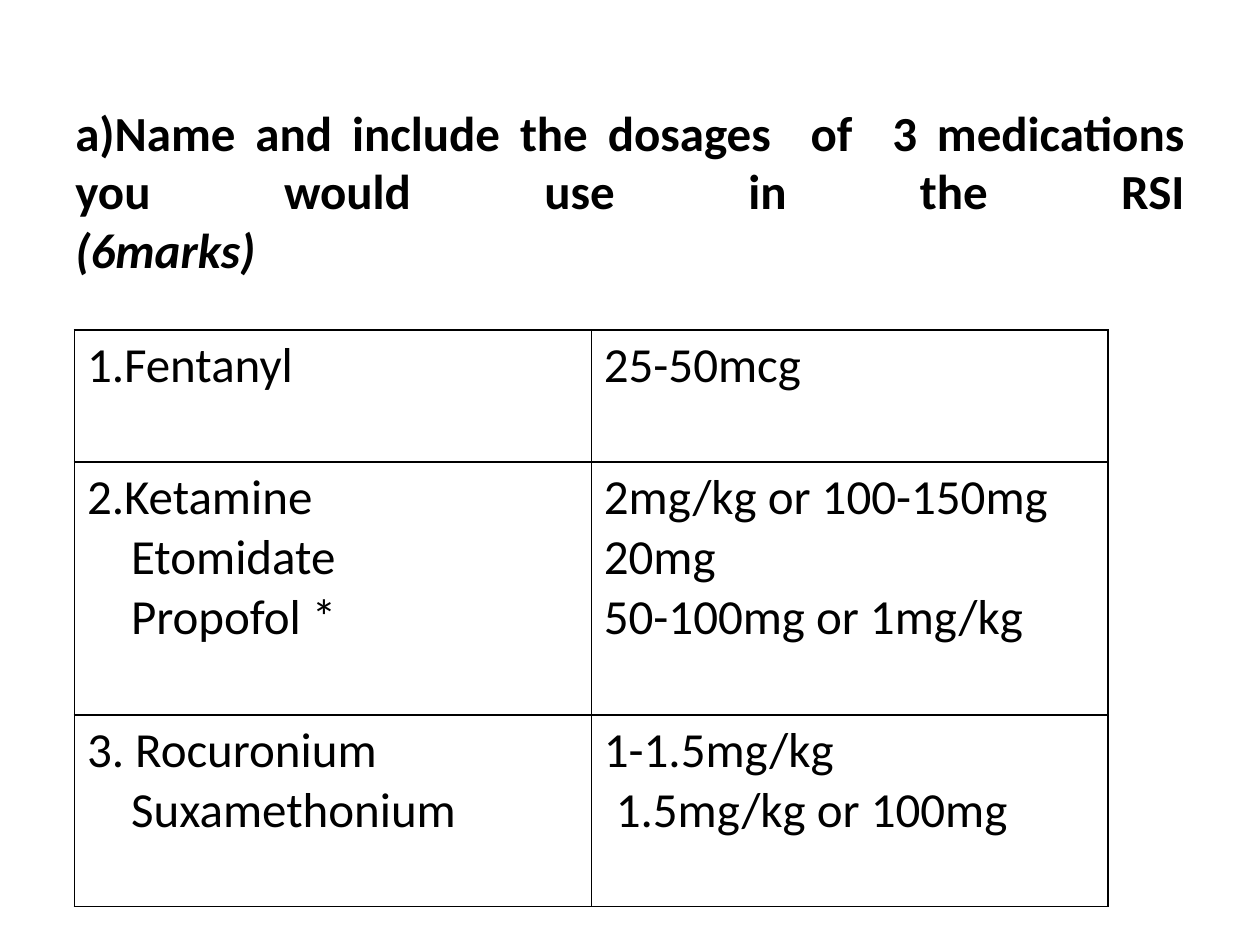
import pptx
import pptx.dml.color
import pptx.enum.text
import pptx.oxml
import pptx.oxml.ns
import pptx.util
from pptx.util import Cm

BLACK = "000000"


def style_font(font, color):
    font.name = "Calibri"
    font.size = pptx.util.Pt(28)
    font.color.rgb = pptx.dml.color.RGBColor.from_string(color)


def outline_cell(cell, color):
    """Draw a 1 pt line on all four sides of a table cell."""
    properties = cell._tc.get_or_add_tcPr()
    for position, side in enumerate(("lnL", "lnR", "lnT", "lnB")):
        border = pptx.oxml.parse_xml(
            f'<a:{side} {pptx.oxml.ns.nsdecls("a")} w="12700"><a:solidFill>'
            f'<a:srgbClr val="{color}"/></a:solidFill></a:{side}>'
        )
        properties.insert(position, border)


presentation = pptx.Presentation()
presentation.slide_width = Cm(25.4)
presentation.slide_height = Cm(19.05)
slide = presentation.slides.add_slide(presentation.slide_layouts[6])

# Question
question_box = slide.shapes.add_textbox(Cm(1.27), Cm(2.84), Cm(22.86), Cm(3.18))
question_frame = question_box.text_frame
question_frame.word_wrap = True
question_frame.vertical_anchor = pptx.enum.text.MSO_ANCHOR.MIDDLE
question = question_frame.paragraphs[0]
question.alignment = pptx.enum.text.PP_ALIGN.JUSTIFY
style_font(question.font, BLACK)
question.font.bold = True
for wording, italic in (
    ("a)Name and include the dosages  of  3 medications you would use in the RSI", False),
    ("(6marks)", True),
):
    part = question.add_run()
    part.text = wording
    style_font(part.font, BLACK)
    part.font.bold = True
    part.font.italic = italic
    question.add_line_break()

# Answers: row height in cm, then (text, indent in cm) lines for drug and dose
answers = [
    (2.66, [("1.Fentanyl", 0)], [("25-50mcg", 0)]),
    (
        5.1,
        [("2.Ketamine", 0), ("Etomidate", 0.89), ("Propofol *", 0.89)],
        [("2mg/kg or 100-150mg", 0), ("20mg", 0), ("50-100mg or 1mg/kg", 0)],
    ),
    (
        3.87,
        [("3. Rocuronium", 0), ("Suxamethonium", 0.89)],
        [("1-1.5mg/kg", 0), ("1.5mg/kg or 100mg", 0.24)],
    ),
]
total_height = sum(height for height, *_ in answers)
medications = slide.shapes.add_table(
    len(answers), 2, Cm(1.5), Cm(6.65), Cm(20.84), Cm(total_height)
).table
medications.first_row = False
medications.horz_banding = False

for row, (height, *columns) in enumerate(answers):
    medications.rows[row].height = Cm(height)
    for column, lines in enumerate(columns):
        cell = medications.cell(row, column)
        cell.fill.background()
        outline_cell(cell, BLACK)
        cell.text = "\n".join(text for text, _ in lines)
        for line, (_, indent) in zip(cell.text_frame.paragraphs, lines):
            style_font(line.font, BLACK)
            if indent:
                line._p.get_or_add_pPr().set("marL", str(Cm(indent)))

presentation.save("out.pptx")
